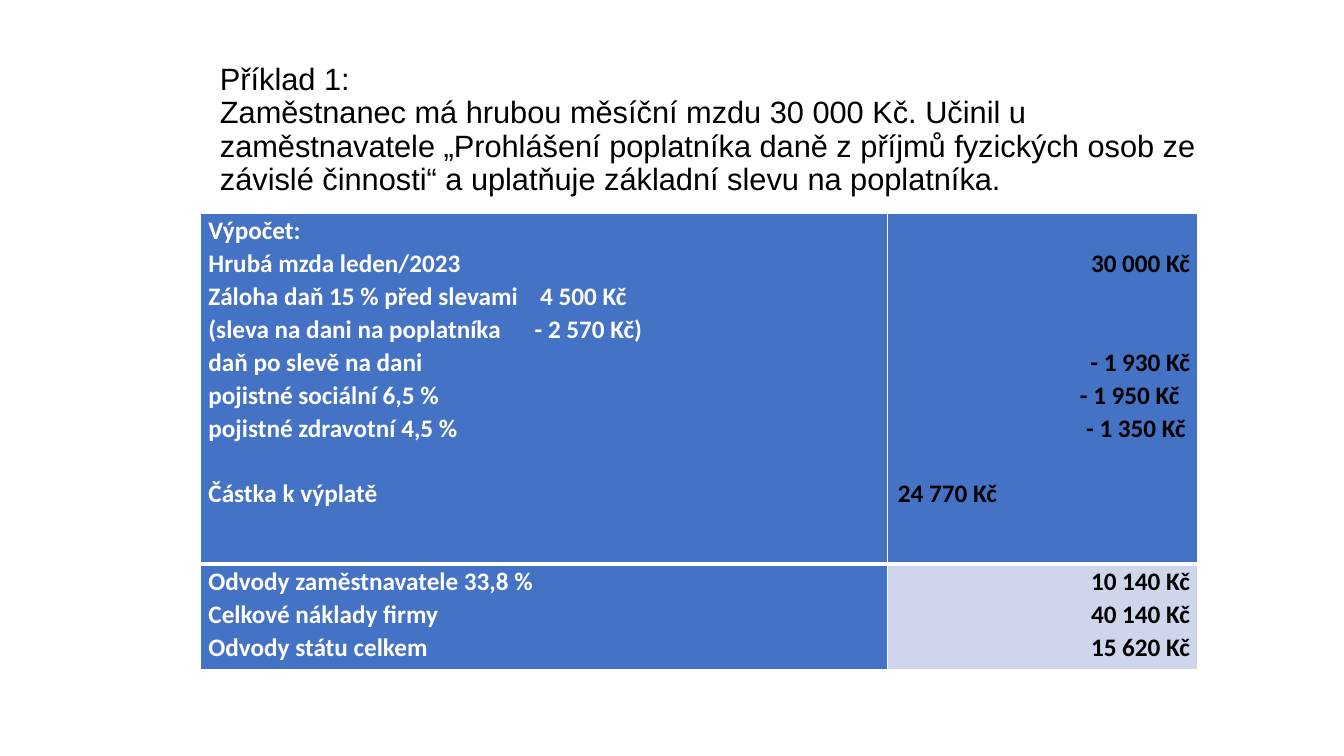
from dataclasses import dataclass

from lxml.etree import SubElement
from pptx import Presentation
from pptx.dml.color import RGBColor
from pptx.enum.text import MSO_ANCHOR, PP_ALIGN
from pptx.oxml.ns import qn
from pptx.util import Pt


@dataclass(frozen=True)
class Theme:
    """Colours, fonts and type sizes of the slide."""
    blue: str = "4472C4"
    pale: str = "CFD5EA"
    white: str = "FFFFFF"
    black: str = "000000"
    heading_font: str = "Arial"
    heading_size: float = 22
    table_font: str = "Calibri"
    table_size: float = 18
    table_spacing: float = 1.07
    line_pitch: float = 23.5


@dataclass(frozen=True)
class Line:
    """A line of a cell, with its tab stop, left indent and gap in lines above."""
    text: str
    tab: float = 0
    indent: float = 0
    gap: int = 0


THEME = Theme()
HEADING = [
    "Příklad 1:",
    "Zaměstnanec má hrubou měsíční mzdu 30 000 Kč. Učinil u zaměstnavatele "
    "„Prohlášení poplatníka daně z příjmů fyzických osob ze závislé činnosti“ "
    "a uplatňuje základní slevu na poplatníka.",
]
PAY_LABELS = [
    Line("Výpočet:"),
    Line("Hrubá mzda leden/2023"),
    Line("Záloha daň 15 % před slevami\t4 500 Kč", tab=237),
    Line("(sleva na dani na poplatníka\t- 2 570 Kč)", tab=233),
    Line("daň po slevě na dani"),
    Line("pojistné sociální 6,5 %"),
    Line("pojistné zdravotní 4,5 %"),
    Line("Částka k výplatě", gap=1),
]
PAY_AMOUNTS = [
    Line("30 000 Kč"),
    Line("- 1 930 Kč", gap=2),
    Line("- 1 950 Kč", indent=132),
    Line("- 1 350 Kč", indent=136.5),
    Line("24 770 Kč", indent=2, gap=1),
]
COST_LABELS = [
    Line("Odvody zaměstnavatele 33,8 %"),
    Line("Celkové náklady firmy"),
    Line("Odvody státu celkem"),
]
COST_AMOUNTS = [Line("10 140 Kč"), Line("40 140 Kč"), Line("15 620 Kč")]


def style_font(font, name, size, colour, bold=False):
    """Give a font its face, size, colour and weight."""
    font.name = name
    font.size = Pt(size)
    font.bold = bold
    font.color.rgb = RGBColor.from_string(colour)


def add_heading(slide, left, top, width, height):
    """Write the task above the table."""
    frame = slide.shapes.add_textbox(Pt(left), Pt(top), Pt(width), Pt(height)).text_frame
    frame.word_wrap = True
    frame.vertical_anchor = MSO_ANCHOR.MIDDLE
    paragraph = frame.paragraphs[0]
    paragraph.line_spacing = 0.9
    for index, sentence in enumerate(HEADING):
        if index:
            paragraph.add_line_break()
        run = paragraph.add_run()
        run.text = sentence
        style_font(run.font, THEME.heading_font, THEME.heading_size, THEME.black)


def add_borders(cell, top, bottom):
    """Draw white borders around a cell."""
    properties = cell._tc.get_or_add_tcPr()
    for side, width in (("L", 1), ("R", 1), ("T", top), ("B", bottom)):
        border = SubElement(properties, qn(f"a:ln{side}"), w=str(Pt(width)))
        fill = SubElement(border, qn("a:solidFill"))
        SubElement(fill, qn("a:srgbClr"), val=THEME.white)


def fill_cell(cell, lines, colour, align, first_gap=0):
    """Write the lines of a cell, starting the given number of lines down."""
    cell.margin_left = cell.margin_right = Pt(5.4)
    cell.margin_top = Pt(first_gap * THEME.line_pitch)
    cell.margin_bottom = Pt(0)
    frame = cell.text_frame
    for index, line in enumerate(lines):
        paragraph = frame.add_paragraph() if index else frame.paragraphs[0]
        paragraph.alignment = PP_ALIGN.LEFT if line.indent else align
        paragraph.line_spacing = THEME.table_spacing
        if line.gap:
            paragraph.space_before = Pt(line.gap * THEME.line_pitch)
        properties = paragraph._p.get_or_add_pPr()
        if line.indent:
            properties.set("marL", str(Pt(line.indent)))
        if line.tab:
            stops = SubElement(properties, qn("a:tabLst"))
            SubElement(stops, qn("a:tab"), pos=str(Pt(line.tab)), algn="l")
        run = paragraph.add_run()
        run.text = line.text
        style_font(run.font, THEME.table_font, THEME.table_size, colour, bold=True)


def add_calculation(slide, left, top, width, height):
    """Build the table of pay and employer costs."""
    table = slide.shapes.add_table(2, 2, Pt(left), Pt(top), Pt(width), Pt(height)).table
    table.first_row = table.horz_banding = False
    label_width, pay_height = 490.5, 250.5
    table.columns[0].width = Pt(label_width)
    table.columns[1].width = Pt(width - label_width)
    table.rows[0].height = Pt(pay_height)
    table.rows[1].height = Pt(height - pay_height)
    bands = [
        (PAY_LABELS, PAY_AMOUNTS, THEME.blue, 1, 1, 3),
        (COST_LABELS, COST_AMOUNTS, THEME.pale, 0, 3, 1),
    ]
    for row, (labels, amounts, amount_fill, amount_gap, above, below) in enumerate(bands):
        label_cell, amount_cell = table.cell(row, 0), table.cell(row, 1)
        for cell, fill in ((label_cell, THEME.blue), (amount_cell, amount_fill)):
            add_borders(cell, above, below)
            cell.fill.solid()
            cell.fill.fore_color.rgb = RGBColor.from_string(fill)
        fill_cell(label_cell, labels, THEME.white, PP_ALIGN.LEFT)
        fill_cell(amount_cell, amounts, THEME.black, PP_ALIGN.RIGHT, amount_gap)


def main():
    """Build the slide and save it."""
    presentation = Presentation()
    presentation.slide_width, presentation.slide_height = Pt(960), Pt(540)
    slide = presentation.slides.add_slide(presentation.slide_layouts[6])
    add_heading(slide, 150, 41, 743, 104.5)
    add_calculation(slide, 143.5, 152.5, 712, 326)
    presentation.save("out.pptx")


if __name__ == "__main__":
    main()
